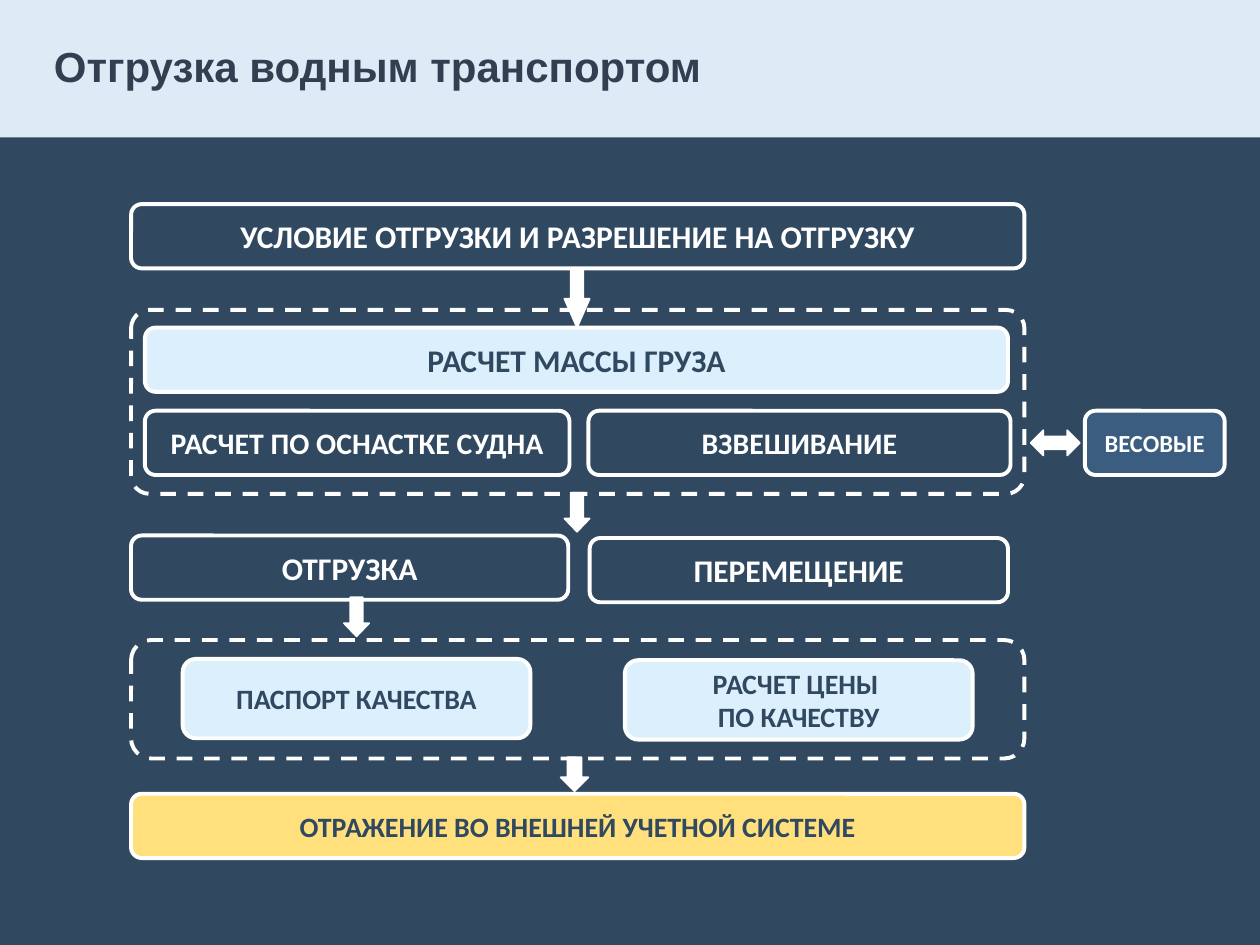
from collections import namedtuple
from pptx import Presentation
from pptx.dml.color import RGBColor
from pptx.enum.dml import MSO_LINE
from pptx.enum.shapes import MSO_SHAPE
from pptx.enum.text import MSO_ANCHOR, PP_ALIGN
from pptx.util import Inches, Pt

COLS, ROWS = 100, 75
NAVY, WHITE, PALE, STEEL, GOLD = "304961", "FFFFFF", "DBF0FC", "3A5D80", "FFE07D"
BAND, INK = "DEEBF7", "333F50"
ROW = 5.1

Box = namedtuple("Box", "x y w h")

deck = Presentation()
deck.slide_width, deck.slide_height = Inches(10), Inches(7.5)
slide = deck.slides.add_slide(deck.slide_layouts[6])


def tint(code):
    return RGBColor.from_string(code)


def sub(box, x, y, w, h):
    return Box(box.x + x, box.y + y, w, h)


def place(box):
    col, row = deck.slide_width / COLS, deck.slide_height / ROWS
    return [int(n) for n in (box.x * col, box.y * row, box.w * col, box.h * row)]


def shape(kind, box, fill=None, line=None, width=2.25):
    item = slide.shapes.add_shape(kind, *place(box))
    item.shadow.inherit = False
    if fill:
        item.fill.solid()
        item.fill.fore_color.rgb = tint(fill)
    else:
        item.fill.background()
    if line:
        item.line.color.rgb = tint(line)
        item.line.width = Pt(width)
    else:
        item.line.fill.background()
    return item


def write(item, text, size, color, face="Calibri", align=PP_ALIGN.CENTER):
    frame = item.text_frame
    frame.word_wrap = True
    frame.vertical_anchor = MSO_ANCHOR.MIDDLE
    para = frame.paragraphs[0]
    para.alignment = align
    for i, part in enumerate(text.split("\n")):
        if i:
            para.add_line_break()
        run = para.add_run()
        run.text = part
        run.font.name, run.font.size, run.font.bold = face, Pt(size), True
        run.font.color.rgb = tint(color)
    return para


def card(box, text, size=18, fill=NAVY, color=WHITE):
    write(shape(MSO_SHAPE.ROUNDED_RECTANGLE, box, fill, WHITE), text, size, color)


def group(box, curve):
    item = shape(MSO_SHAPE.ROUNDED_RECTANGLE, box, None, WHITE)
    item.adjustments[0] = curve
    item.line.dash_style = MSO_LINE.DASH


def arrow(box, head=0.5, kind=MSO_SHAPE.DOWN_ARROW):
    item = shape(kind, box, WHITE, WHITE, 1)
    item.adjustments[0], item.adjustments[1] = 0.5, head


def header(box):
    shape(MSO_SHAPE.RECTANGLE, box, BAND)
    title = slide.shapes.add_textbox(*place(sub(box, 3.3, 1.6, 60.6, 7.8)))
    para = write(title, "Отгрузка водным транспортом", 24, INK, "Arial", PP_ALIGN.LEFT)
    para.line_spacing = 0.9


def mass(box):
    group(box, 0.1)
    card(sub(box, 1.1, 1.4, 68.5, ROW), "РАСЧЕТ МАССЫ ГРУЗА", 18, PALE, NAVY)
    card(sub(box, 1.1, 8, 33.7, ROW), "РАСЧЕТ ПО ОСНАСТКЕ СУДНА", 17)
    card(sub(box, 36.3, 8, 33.5, ROW), "ВЗВЕШИВАНИЕ", 17)


def move(box):
    card(sub(box, 0, 0, 34.7, ROW), "ОТГРУЗКА")
    card(sub(box, 36.4, 0.2, 33.2, ROW), "ПЕРЕМЕЩЕНИЕ")


def grade(box):
    card(sub(box, 4.1, 1.5, 27.6, 6.3), "ПАСПОРТ КАЧЕСТВА", 16, PALE, NAVY)
    card(sub(box, 39.2, 1.6, 27.6, 6.3), "РАСЧЕТ ЦЕНЫ \nПО КАЧЕСТВУ", 16, PALE, NAVY)
    group(box, 0.17)


def scales(box):
    arrow(sub(box, 0, 1.55, 3.9, 2), 0.5, MSO_SHAPE.LEFT_RIGHT_ARROW)
    card(sub(box, 4.3, 0, 11.1, ROW), "ВЕСОВЫЕ", 14, STEEL)


def flow(box):
    card(sub(box, 0, 0, box.w, ROW), "УСЛОВИЕ ОТГРУЗКИ И РАЗРЕШЕНИЕ НА ОТГРУЗКУ")
    mass(sub(box, 0, 8.4, box.w, 14.6))
    move(sub(box, 0, 26.3, box.w, ROW))
    grade(sub(box, 0, 34.6, box.w, 9.4))
    card(sub(box, 0, 46.8, box.w, ROW), "ОТРАЖЕНИЕ ВО ВНЕШНЕЙ УЧЕТНОЙ СИСТЕМЕ", 16, GOLD, NAVY)
    arrow(sub(box, 34.4, 5.1, 2, 4.7), 1.14)
    arrow(sub(box, 34.4, 22.9, 2, 3.1), 0.52)
    arrow(sub(box, 16.9, 31.2, 2, 3.1), 0.52)
    arrow(sub(box, 34.1, 43.9, 2.2, 2.7))


slide.background.fill.solid()
slide.background.fill.fore_color.rgb = tint(NAVY)
header(Box(0, 0, COLS, 10.9))
flow(Box(10.4, 16.2, 70.9, 51.9))
scales(Box(81.8, 32.6, 15.4, ROW))
deck.save("out.pptx")
